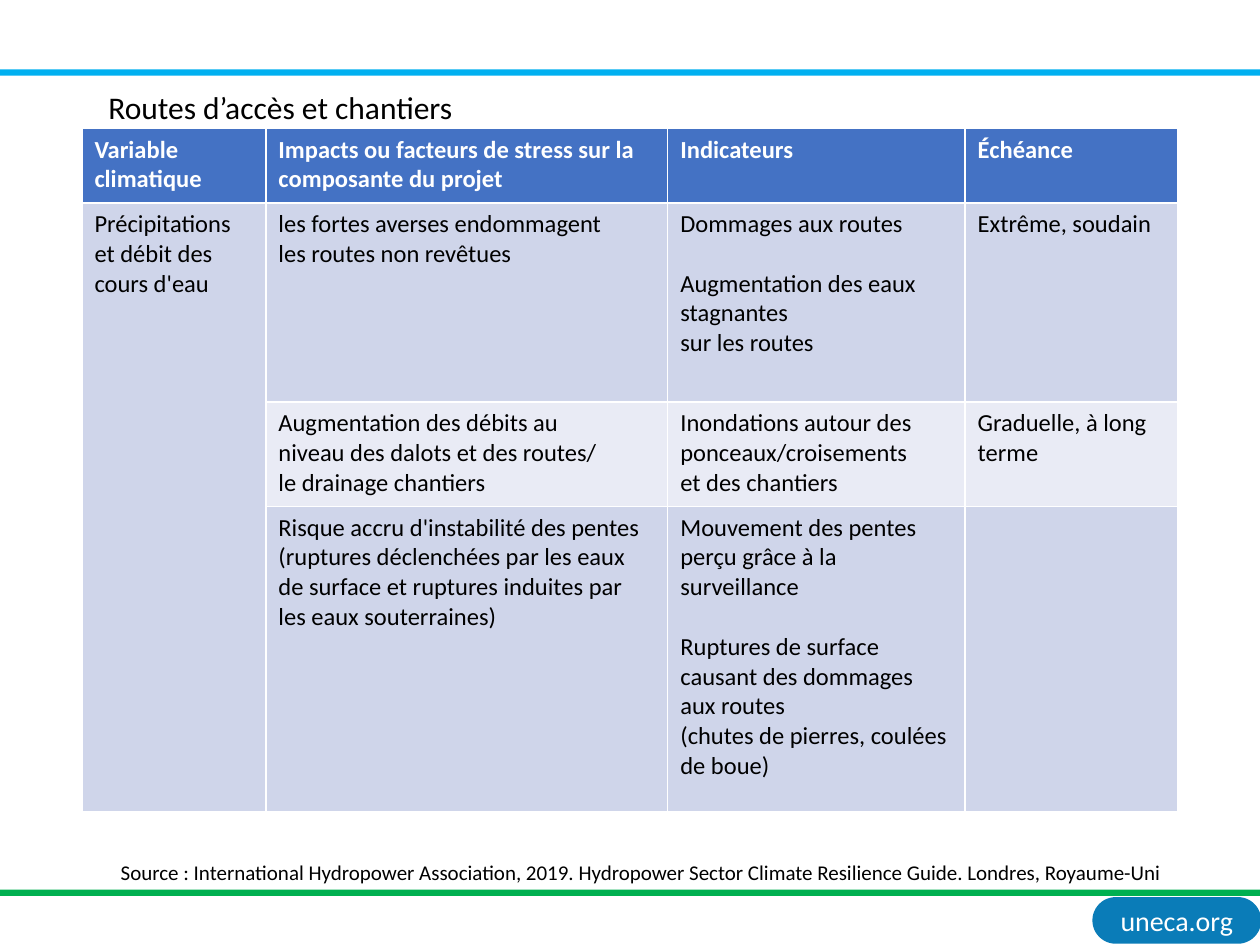
from pptx import Presentation
from pptx.dml.color import RGBColor
from pptx.enum import shapes, text
from pptx.util import Inches, Pt

HUES = {"sky": "00B0F0", "green": "00B050", "badge": "0A7CB8", "head": "4472C4",
        "band": "CFD5EA", "pale": "E9EBF5", "white": "FFFFFF", "black": "000000"}
FONT = "Calibri"
GAP = 17  # points: one line of cell text

COLS = [1.46, 3.19, 2.36, 1.69]
ROWS = [0.59, 1.58, 0.83, 2.42]
FILLS = ["head", "band", "pale", "band"]
# A cell is a list of blocks, set apart by a gap; each line of a block is a paragraph.
CELLS = [
    [["Variable climatique"],
     ["Impacts ou facteurs de stress sur la composante du projet"],
     ["Indicateurs"],
     ["Échéance"]],
    [["Précipitations et débit des cours d'eau"],
     ["les fortes averses endommagent\nles routes non revêtues"],
     ["Dommages aux routes", "Augmentation des eaux stagnantes\nsur les routes"],
     ["Extrême, soudain"]],
    [[],
     ["Augmentation des débits au\nniveau des dalots et des routes/\nle drainage chantiers"],
     ["Inondations autour des\nponceaux/croisements\net des chantiers"],
     ["Graduelle, à long terme"]],
    [[],
     ["Risque accru d'instabilité des pentes (ruptures déclenchées par les eaux "
      "de surface et ruptures induites par les eaux souterraines)"],
     ["Mouvement des pentes\nperçu grâce à la surveillance",
      "Ruptures de surface\ncausant des dommages aux routes\n"
      "(chutes de pierres, coulées de boue)"],
     []],
]


def color(name):
    return RGBColor.from_string(HUES[name])


def style(para, size, hue="black", bold=False):
    font = para.font
    font.name, font.size, font.bold = FONT, Pt(size), bold
    font.color.rgb = color(hue)


def add_block(slide, kind, box, hue):
    """Add a filled shape with no line or shadow."""
    block = slide.shapes.add_shape(kind, *map(Inches, box))
    block.shadow.inherit = False
    block.fill.solid()
    block.fill.fore_color.rgb = color(hue)
    block.line.fill.background()
    return block


def add_badge(slide, words):
    badge = add_block(slide, shapes.MSO_SHAPE.ROUNDED_RECTANGLE,
                      (8.67, 7.12, 1.34, 0.37), "badge")
    badge.adjustments[0] = 0.5
    frame = badge.text_frame
    frame.margin_left = frame.margin_right = Inches(0.05)
    frame.margin_top = frame.margin_bottom = Inches(0.05)
    frame.vertical_anchor = text.MSO_ANCHOR.MIDDLE
    frame.text = words
    para = frame.paragraphs[0]
    para.alignment = text.PP_ALIGN.CENTER
    style(para, 16, "white")


def set_title(slide, words):
    title = slide.shapes.title
    title.left, title.top, title.width, title.height = map(Inches, (0.76, 0.65, 2.97, 0.4))
    frame = title.text_frame
    frame.text = words
    frame.word_wrap = False
    frame.auto_size = text.MSO_AUTO_SIZE.NONE
    frame.vertical_anchor = text.MSO_ANCHOR.TOP
    para = frame.paragraphs[0]
    para.alignment = text.PP_ALIGN.LEFT
    style(para, 18)


def add_source(slide, words):
    frame = slide.shapes.add_textbox(*map(Inches, (0.86, 6.77, 9.3, 0.3))).text_frame
    frame.word_wrap = True
    frame.text = words
    style(frame.paragraphs[0], 12)


def fill_cell(cell, blocks, fill):
    cell.fill.solid()
    cell.fill.fore_color.rgb = color(fill)
    head = fill == "head"
    lines = [(line, b > 0 and n == 0) for b, block in enumerate(blocks)
             for n, line in enumerate(block.split("\n"))]
    frame = cell.text_frame
    for i, (line, gap) in enumerate(lines):
        para = frame.add_paragraph() if i else frame.paragraphs[0]
        para.text = line
        if gap:
            para.space_before = Pt(GAP)
        style(para, 14, "white" if head else "black", head)


def add_grid(slide):
    box = (0.65, 1.02, sum(COLS), sum(ROWS))
    grid = slide.shapes.add_table(len(ROWS), len(COLS), *map(Inches, box)).table
    for col, width in zip(grid.columns, COLS):
        col.width = Inches(width)
    for row, height, cells, fill in zip(grid.rows, ROWS, CELLS, FILLS):
        row.height = Inches(height)
        for cell, blocks in zip(row.cells, cells):
            fill_cell(cell, blocks, fill)
    grid.cell(1, 0).merge(grid.cell(3, 0))


def main():
    deck = Presentation()
    deck.slide_width, deck.slide_height = Inches(10), Inches(7.5)
    slide = deck.slides.add_slide(deck.slide_layouts[5])
    add_badge(slide, "uneca.org")
    for top, hue in ((0.55, "sky"), (7.06, "green")):
        add_block(slide, shapes.MSO_SHAPE.RECTANGLE, (0, top, 10, 0.05), hue)
    add_grid(slide)
    set_title(slide, "Routes d’accès et chantiers")
    add_source(slide, "Source : International Hydropower Association, 2019. "
                      "Hydropower Sector Climate Resilience Guide. Londres, Royaume-Uni")
    deck.save("out.pptx")


if __name__ == "__main__":
    main()
